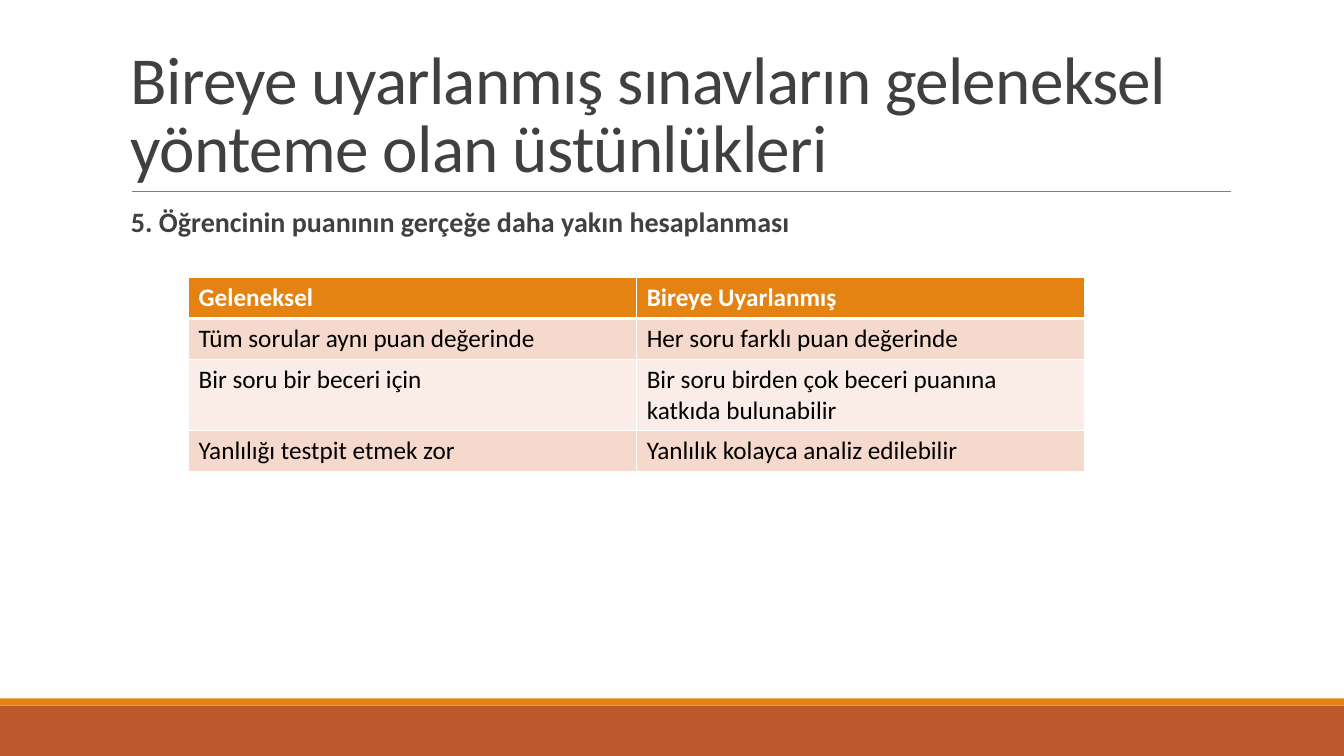
"""Build a slide comparing traditional and adaptive exams."""
from dataclasses import dataclass

from lxml import etree
from pptx import Presentation
from pptx import util as u
from pptx.dml.color import RGBColor
from pptx.enum import shapes, text
from pptx.oxml import ns

FONT = "Calibri"
ORANGE, RUST, GREY, WHITE, BLACK = "E48312", "BD582C", "404040", "FFFFFF", "000000"
BANDS = ("F5D9CC", "FAEDE7")


@dataclass(frozen=True)
class Bar:
    top: float
    height: float
    fill: str


@dataclass(frozen=True)
class Label:
    words: str
    top: float
    height: float
    size: int
    spacing: float
    left_inset: float = 0.1
    anchor: text.MSO_ANCHOR = text.MSO_ANCHOR.TOP
    bold: bool = False
    before: int = 0
    after: int = 0
    tracking: int = 0


@dataclass(frozen=True)
class Row:
    traditional: str
    adaptive: str
    height: float = 0.41


BARS = (Bar(7, 0.5, RUST), Bar(6.93, 0.07, ORANGE))
LABELS = (
    Label("Bireye uyarlanmış sınavların geleneksel yönteme olan üstünlükleri",
          0.31, 1.59, 48, 0.85, anchor=text.MSO_ANCHOR.BOTTOM, tracking=-50),
    Label("5. Öğrencinin puanının gerçeğe daha yakın hesaplanması",
          2.02, 4.4, 20, 0.9, bold=True, before=12, after=2),
)
ROWS = (
    Row("Geleneksel", "Bireye Uyarlanmış"),
    Row("Tüm sorular aynı puan değerinde", "Her soru farklı puan değerinde"),
    Row("Bir soru bir beceri için",
        "Bir soru birden çok beceri puanına katkıda bulunabilir", 0.7),
    Row("Yanlılığı testpit etmek zor", "Yanlılık kolayca analiz edilebilir"),
)


def rgb(value: str) -> RGBColor:
    return RGBColor.from_string(value)


def add_run(p, words: str, size: int, color: str, bold: bool):
    r = p.add_run()
    r.text = words
    r.font.name = FONT
    r.font.size = u.Pt(size)
    r.font.bold = bold
    r.font.color.rgb = rgb(color)
    return r


def draw_bar(s, bar: Bar) -> None:
    sp = s.shapes.add_shape(shapes.MSO_SHAPE.RECTANGLE, 0, u.Inches(bar.top),
                            u.Inches(13.33), u.Inches(bar.height))
    sp.shadow.inherit = False
    sp.fill.solid()
    sp.fill.fore_color.rgb = rgb(bar.fill)
    sp.line.fill.background()


def draw_rule(s) -> None:
    line = s.shapes.add_connector(shapes.MSO_CONNECTOR.STRAIGHT, u.Inches(1.31),
                                  u.Inches(1.9), u.Inches(12.21), u.Inches(1.9))
    line.line.color.rgb = rgb("808080")
    line.line.width = u.Pt(0.5)
    etree.SubElement(line._element.spPr, ns.qn("a:effectLst"))


def draw_label(s, label: Label) -> None:
    sp = s.shapes.add_textbox(u.Inches(1.2), u.Inches(label.top),
                              u.Inches(11), u.Inches(label.height))
    tf = sp.text_frame
    tf.word_wrap = True
    tf.vertical_anchor = label.anchor
    tf.margin_left = u.Inches(label.left_inset)
    p = tf.paragraphs[0]
    p.line_spacing = label.spacing
    p.space_before = u.Pt(label.before)
    p.space_after = u.Pt(label.after)
    r = add_run(p, label.words, label.size, GREY, label.bold)
    if label.tracking:
        r._r.get_or_add_rPr().set("spc", str(label.tracking))


def set_borders(cell, top: float, bottom: float) -> None:
    tc_pr = cell._tc.get_or_add_tcPr()
    for side, width in (("L", 1), ("R", 1), ("T", top), ("B", bottom)):
        ln = etree.SubElement(tc_pr, ns.qn(f"a:ln{side}"), w=str(u.Pt(width)))
        fill = etree.SubElement(ln, ns.qn("a:solidFill"))
        etree.SubElement(fill, ns.qn("a:srgbClr"), val=WHITE)


def draw_table(s, rows: tuple[Row, ...]) -> None:
    height = sum(row.height for row in rows)
    table = s.shapes.add_table(len(rows), 2, u.Inches(1.87), u.Inches(2.75),
                               u.Inches(8.89), u.Inches(height)).table
    for i, row in enumerate(rows):
        table.rows[i].height = u.Inches(row.height)
        header = i == 0
        for j, words in enumerate((row.traditional, row.adaptive)):
            cell = table.cell(i, j)
            set_borders(cell, 3 if i == 1 else 1, 3 if header else 1)
            cell.fill.solid()
            cell.fill.fore_color.rgb = rgb(ORANGE if header else BANDS[(i - 1) % 2])
            add_run(cell.text_frame.paragraphs[0], words, 18,
                    WHITE if header else BLACK, header)


def main() -> None:
    prs = Presentation()
    prs.slide_width, prs.slide_height = u.Inches(13.33), u.Inches(7.5)
    s = prs.slides.add_slide(prs.slide_layouts[6])
    for bar in BARS:
        draw_bar(s, bar)
    draw_rule(s)
    for label in LABELS:
        draw_label(s, label)
    draw_table(s, ROWS)
    prs.save("out.pptx")


if __name__ == "__main__":
    main()
